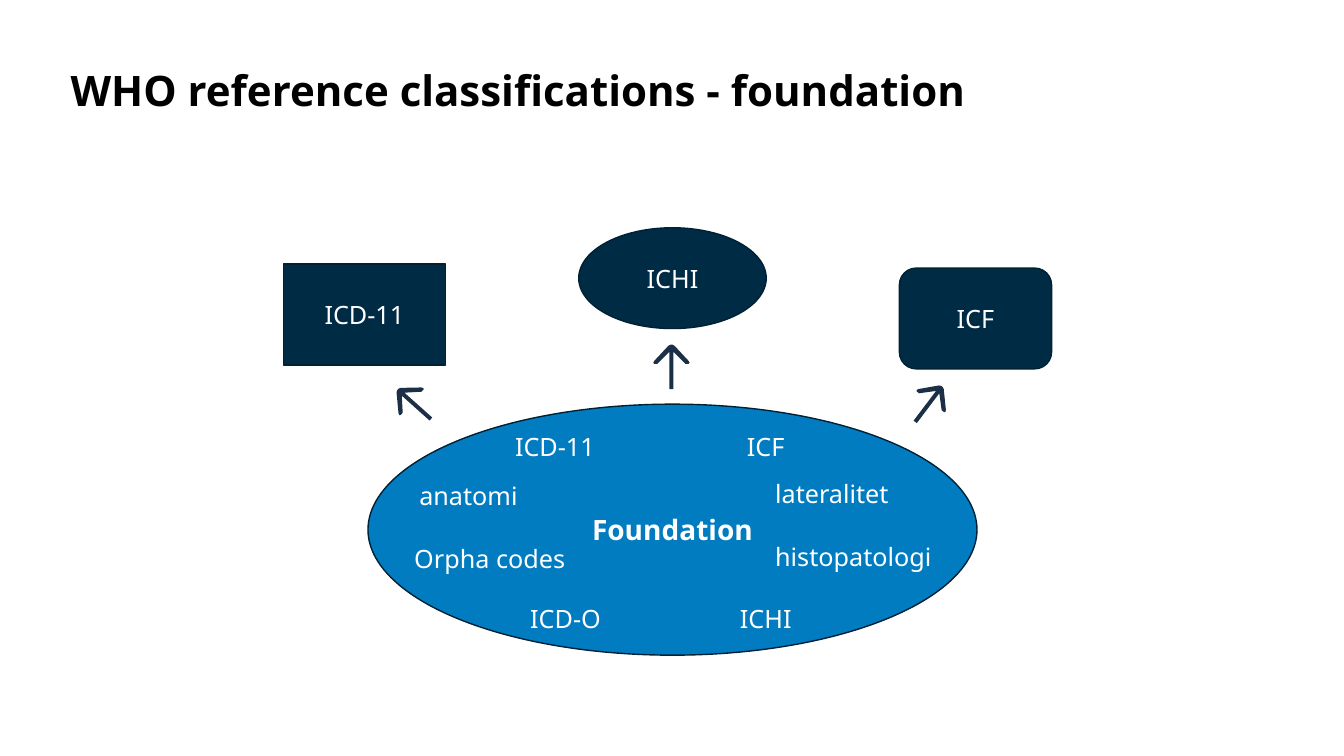
from pptx import Presentation
from pptx.dml.color import RGBColor
from pptx.enum.shapes import MSO_SHAPE
from pptx.enum.text import MSO_ANCHOR, MSO_AUTO_SIZE, PP_ALIGN
from pptx.util import Inches, Pt

BLACK = RGBColor(0x00, 0x00, 0x00)
WHITE = RGBColor(0xFF, 0xFF, 0xFF)
BLUE = RGBColor(0x01, 0x7C, 0xC1)
NAVY = RGBColor(0x00, 0x2B, 0x45)
OUTLINE = RGBColor(0x00, 0x20, 0x33)
ARROW = RGBColor(0x1B, 0x2F, 0x46)


def write(box, text, size=18, color=WHITE, bold=False, align=PP_ALIGN.LEFT, anchor=MSO_ANCHOR.TOP):
    frame = box.text_frame
    frame.vertical_anchor = anchor
    para = frame.paragraphs[0]
    para.alignment = align
    span = para.add_run()
    span.text = text
    span.font.name = "Noto Sans"
    span.font.size = Pt(size)
    span.font.bold = bold
    span.font.color.rgb = color


deck = Presentation()
deck.slide_width = Inches(13.33)
deck.slide_height = Inches(7.5)
page = deck.slides.add_slide(deck.slide_layouts[5])

# Title
title = page.shapes.title
title.left, title.top, title.width, title.height = (Inches(n) for n in (0.7, 0.59, 10.63, 1.18))
frame = title.text_frame
frame.word_wrap = True
frame.auto_size = MSO_AUTO_SIZE.NONE
frame.margin_left = frame.margin_top = frame.margin_right = 0
frame.margin_bottom = Inches(0.05)
write(title, "WHO reference classifications - foundation", size=30, color=BLACK, bold=True)
frame.paragraphs[0].line_spacing = 1.1

# Foundation and the three classifications built on it
nodes = [
    ("Foundation", MSO_SHAPE.OVAL, 3.65, 4.01, 6.04, 2.49, BLUE, 20, True),
    ("ICD-11", MSO_SHAPE.RECTANGLE, 2.81, 2.62, 1.61, 1, NAVY, 18, False),
    ("ICHI", MSO_SHAPE.OVAL, 5.74, 2.26, 1.86, 1, NAVY, 18, False),
    ("ICF", MSO_SHAPE.ROUNDED_RECTANGLE, 8.92, 2.66, 1.51, 1, NAVY, 18, False),
]
for text, kind, left, top, width, height, fill, size, bold in nodes:
    node = page.shapes.add_shape(kind, Inches(left), Inches(top), Inches(width), Inches(height))
    node.shadow.inherit = False
    node.fill.solid()
    node.fill.fore_color.rgb = fill
    node.line.color.rgb = OUTLINE
    node.line.width = Pt(1)
    write(node, text, size=size, bold=bold, align=PP_ALIGN.CENTER, anchor=MSO_ANCHOR.MIDDLE)

# Contents of the foundation
labels = [
    ("ICD-11", 5.01, 4.23, 1),
    ("ICF", 7.31, 4.23, 0.58),
    ("anatomi", 4.06, 4.72, 1.19),
    ("lateralitet", 7.59, 4.7, 1.34),
    ("Orpha codes", 4.01, 5.34, 1.71),
    ("histopatologi", 7.59, 5.32, 1.77),
    ("ICD-O", 5.16, 5.94, 0.91),
    ("ICHI", 7.24, 5.94, 0.72),
]
for text, left, top, width in labels:
    label = page.shapes.add_textbox(Inches(left), Inches(top), Inches(width), Inches(0.4))
    label.text_frame.word_wrap = False
    label.text_frame.auto_size = MSO_AUTO_SIZE.SHAPE_TO_FIT_TEXT
    write(label, text)

# Arrows: a right-pointing outline in hundredths of an inch, mirrored and turned
upper = [(0, 16), (37, 16), (25, 4), (25, 1), (26, 0), (28, 1), (43, 15), (44, 17)]
outline = upper + [(x, 36 - y) for x, y in reversed(upper)]
for left, top, angle in [(3.89, 3.83, 221.8), (8.99, 3.83, 307.1), (6.44, 3.46, 270)]:
    builder = page.shapes.build_freeform(*outline[0], scale=Inches(0.01))
    builder.add_line_segments(outline[1:], close=True)
    arrow = builder.convert_to_shape(Inches(left), Inches(top))
    arrow.rotation = angle
    arrow.shadow.inherit = False
    arrow.fill.solid()
    arrow.fill.fore_color.rgb = ARROW
    arrow.line.fill.background()

deck.save("out.pptx")
